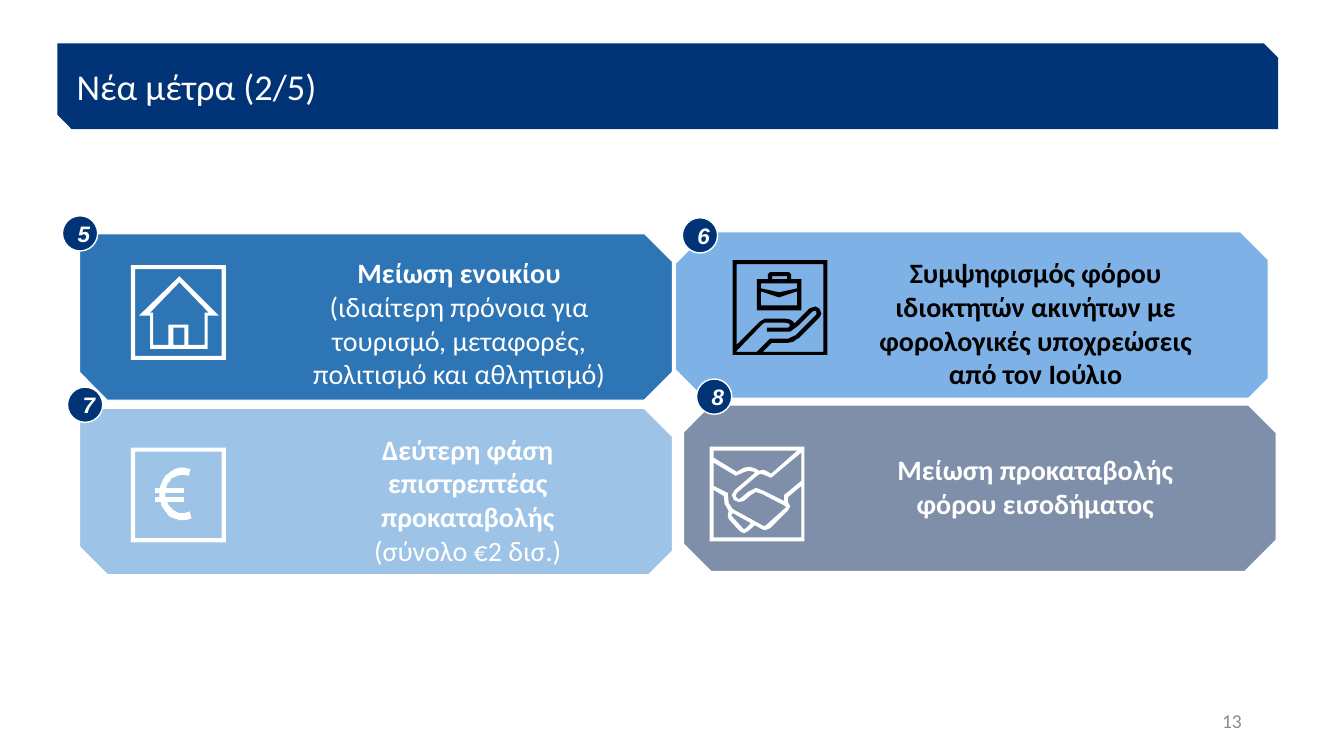
from dataclasses import dataclass
from math import cos, radians, sin

from pptx import Presentation
from pptx.dml.color import RGBColor
from pptx.enum.shapes import MSO_SHAPE
from pptx.enum.text import MSO_ANCHOR, PP_ALIGN
from pptx.util import Pt

SNIPPED, OVAL, RECT = MSO_SHAPE.SNIP_2_DIAG_RECTANGLE, MSO_SHAPE.OVAL, MSO_SHAPE.RECTANGLE
LEFT, CENTER, RIGHT = PP_ALIGN.LEFT, PP_ALIGN.CENTER, PP_ALIGN.RIGHT
TOP, MIDDLE = MSO_ANCHOR.TOP, MSO_ANCHOR.MIDDLE

COLORS = {
    "navy": "013476", "blue": "2E75B6", "sky": "7EB2E6", "pale": "9DC3E6",
    "slate": "7F8FA9", "white": "FFFFFF", "black": "000000", "grey": "8C8C8C",
}
PANEL_W, PANEL_H, BADGE = 423.4, 118.8, 25.2
ICON_UNIT = 0.72

Contour = list[tuple[float, float]]


@dataclass
class Box:
    x: float
    y: float
    w: float
    h: float


@dataclass
class Line:
    text: str
    size: float
    color: str
    bold: bool = False
    italic: bool = False
    font: str = "Calibri"


@dataclass
class Measure:
    number: str
    x: float
    y: float
    fill: str
    ink: str
    badge: tuple[float, float]
    text_box: Box
    headline: str
    detail: str
    icon_at: tuple[float, float]
    icon: list[list[Contour]]


def rect(x: float, y: float, w: float, h: float) -> Contour:
    return [(x, y), (x + w, y), (x + w, y + h), (x, y + h)]


def arc(cx: float, cy: float, rx: float, ry: float, start: int, end: int) -> Contour:
    step = 4 if end > start else -4
    angles = [radians(a) for a in range(start, end + step, step)]
    return [(cx + rx * cos(a), cy + ry * sin(a)) for a in angles]


def rgb(name: str) -> RGBColor:
    return RGBColor.from_string(COLORS[name])


def write(s, lines: list[Line], align=CENTER, anchor=TOP) -> None:
    tf = s.text_frame
    tf.word_wrap = True
    tf.vertical_anchor = anchor
    for i, line in enumerate(lines):
        p = tf.add_paragraph() if i else tf.paragraphs[0]
        p.text, p.alignment = line.text, align
        f = p.font
        f.name, f.size, f.bold, f.italic = line.font, Pt(line.size), line.bold, line.italic
        f.color.rgb = rgb(line.color)


def add_text(slide, b: Box, lines: list[Line], align=CENTER, anchor=TOP) -> None:
    write(slide.shapes.add_textbox(Pt(b.x), Pt(b.y), Pt(b.w), Pt(b.h)), lines, align, anchor)


def paint(s, fill: str, line_width: float = 0) -> None:
    s.shadow.inherit = False
    s.fill.solid()
    s.fill.fore_color.rgb = rgb(fill)
    if line_width:
        s.line.color.rgb = rgb("white")
        s.line.width = Pt(line_width)
    else:
        s.line.fill.background()


def add_box(slide, kind, b: Box, fill: str, line_width: float = 0):
    s = slide.shapes.add_shape(kind, Pt(b.x), Pt(b.y), Pt(b.w), Pt(b.h))
    paint(s, fill, line_width)
    return s


def add_icon(slide, m: Measure) -> None:
    for contours in m.icon:
        builder = slide.shapes.build_freeform(*contours[0][0], scale=Pt(ICON_UNIT))
        for i, contour in enumerate(contours):
            if i:
                builder.move_to(*contour[0])
            builder.add_line_segments(contour[1:], close=True)
        paint(builder.convert_to_shape(Pt(m.icon_at[0]), Pt(m.icon_at[1])), m.ink)


OUTER = rect(0, 0, 94, 94)
FRAME = [OUTER, rect(4.5, 4.5, 85.5, 85.5)]
HOUSE = [FRAME, [
    [(19, 83), (76, 83), (76, 50), (87, 50), (48, 11), (8, 50), (19, 50)],
    rect(42, 62, 11, 17),
    [(19, 47), (48, 17), (77, 47), (73, 47), (73, 79), (57, 79), (57, 59), (37, 59),
     (37, 79), (22, 79), (22, 47)],
]]
EURO = [
    FRAME,
    [arc(51, 46, 23, 26, 67, 291) + arc(51, 46, 17, 19, 291, 67)],
    [rect(24, 40, 29, 5)],
    [rect(24, 49, 29, 5)],
]
BRIEFCASE = [
    [(68, 19), (58, 19), (58, 14), (56, 12), (37, 12), (35, 14), (35, 19), (24, 19),
     (24, 50), (68, 50)],
    rect(39, 16, 15, 3),
    [(28, 23), (64, 23), (64, 28), (46, 32), (28, 28)],
    [(28, 45), (28, 31), (46, 37), (64, 31), (64, 45)],
]
OPEN_HAND = [
    OUTER,
    [(90, 91), (30, 91), (39, 82), (55, 82), (60, 81), (64, 78), (65, 78), (79, 64),
     (86, 57), (88, 53), (86, 48), (82, 46), (76, 48), (62, 62), (61, 63), (60, 61),
     (57, 59), (52, 58), (32, 58), (27, 61), (26, 62), (4, 84), (4, 4), (90, 4)],
    [(4, 90), (29, 64), (30, 63), (32, 62), (52, 62), (56, 63), (57, 65), (55, 67),
     (53, 67), (34, 67), (34, 71), (52, 71), (57, 71), (65, 65), (79, 51), (82, 50),
     (83, 51), (83, 54), (76, 61), (62, 75), (61, 75), (55, 78), (37, 78), (24, 91),
     (4, 91)],
]
HANDSHAKE = [
    OUTER,
    [(22, 67), (23, 66), (41, 76), (36, 81), (34, 82), (33, 81), (22, 69)],
    [(23, 62), (19, 56), (18, 46), (4, 39), (4, 16), (26, 29), (35, 25), (39, 24),
     (44, 25), (45, 26), (25, 43), (22, 48), (24, 53), (29, 55), (34, 54), (41, 48),
     (46, 45), (52, 47), (75, 59), (76, 60), (56, 78), (54, 79)],
    [(74, 48), (74, 54), (54, 44), (46, 41), (38, 45), (31, 51), (29, 52), (27, 51),
     (26, 49), (27, 46), (47, 29), (50, 27), (54, 28), (61, 31), (91, 6), (91, 34)],
    [(87, 4), (61, 27), (56, 24), (53, 23), (49, 24), (46, 22), (40, 20), (34, 21),
     (27, 25), (4, 11), (4, 4)],
    [(4, 90), (4, 43), (14, 49), (15, 57), (19, 64), (18, 68), (19, 72), (30, 84),
     (34, 86), (38, 84), (45, 78), (52, 82), (55, 83), (60, 81), (78, 63), (80, 59),
     (78, 56), (78, 50), (91, 39), (91, 90)],
]
MEASURES = [
    Measure("5", 56.9, 167, "blue", "white", (44.6, 154.1), Box(202.3, 179.3, 251.3, 104.4),
            "Μείωση ενοικίου",
            "(ιδιαίτερη πρόνοια για τουρισμό, μεταφορές, πολιτισμό και αθλητισμό)",
            (93.6, 189.4), HOUSE),
    Measure("6", 482.4, 165.6, "sky", "black", (487.4, 155.5), Box(614.9, 179.3, 249.8, 104.4),
            "Συμψηφισμός φόρου ιδιοκτητών ακινήτων με φορολογικές υποχρεώσεις από τον Ιούλιο",
            "", (523.4, 185.8), [BRIEFCASE, OPEN_HAND]),
    Measure("7", 56.9, 291.6, "pale", "white", (48.2, 276.5), Box(214.6, 305.3, 239, 104.4),
            "Δεύτερη φάση επιστρεπτέας προκαταβολής", "(σύνολο €2 δισ.)",
            (93.6, 319.7), EURO),
    Measure("8", 488.2, 289.4, "slate", "white", (497.5, 270.7), Box(607, 319.7, 265, 55.4),
            "Μείωση προκαταβολής φόρου εισοδήματος", "", (506.9, 319), [HANDSHAKE]),
]
CORNER_CUTS = [
    Box(466.6, 139.7, 36, 41.8), Box(464.4, 271.4, 36, 35.3), Box(469.4, 396, 35.3, 31.7),
    Box(895.7, 393.1, 35.3, 31.7), Box(896.4, 271.4, 35.3, 31.7),
]


def main() -> None:
    prs = Presentation()
    prs.slide_width, prs.slide_height = Pt(960), Pt(540)
    slide = prs.slides.add_slide(prs.slide_layouts[6])

    header = add_box(slide, SNIPPED, Box(41, 31, 872, 61.2), "navy")
    write(header, [Line("Νέα μέτρα (2/5)", 26, "white")], LEFT, MIDDLE)
    tf = header.text_frame
    tf.margin_left = tf.margin_right = Pt(8.64)
    tf.margin_top = tf.margin_bottom = Pt(1.44)

    for m in reversed(MEASURES):
        add_box(slide, SNIPPED, Box(m.x, m.y, PANEL_W, PANEL_H), m.fill, 0.75)
    for cut in CORNER_CUTS:
        add_box(slide, RECT, cut, "white", 0.75).rotation = 45
    for m in MEASURES:
        lines = [Line(m.headline, 20, m.ink, bold=True)]
        if m.detail:
            lines.append(Line(m.detail, 20, m.ink))
        add_text(slide, m.text_box, lines)
        add_icon(slide, m)
        badge = add_box(slide, OVAL, Box(*m.badge, BADGE, BADGE), "navy", 1)
        write(badge, [Line(m.number, 16, "white", True, True, "Arial")], CENTER, MIDDLE)

    add_text(slide, Box(678.2, 500.4, 216, 28.8), [Line("13", 14, "grey")], RIGHT, MIDDLE)
    prs.save("out.pptx")


if __name__ == "__main__":
    main()
